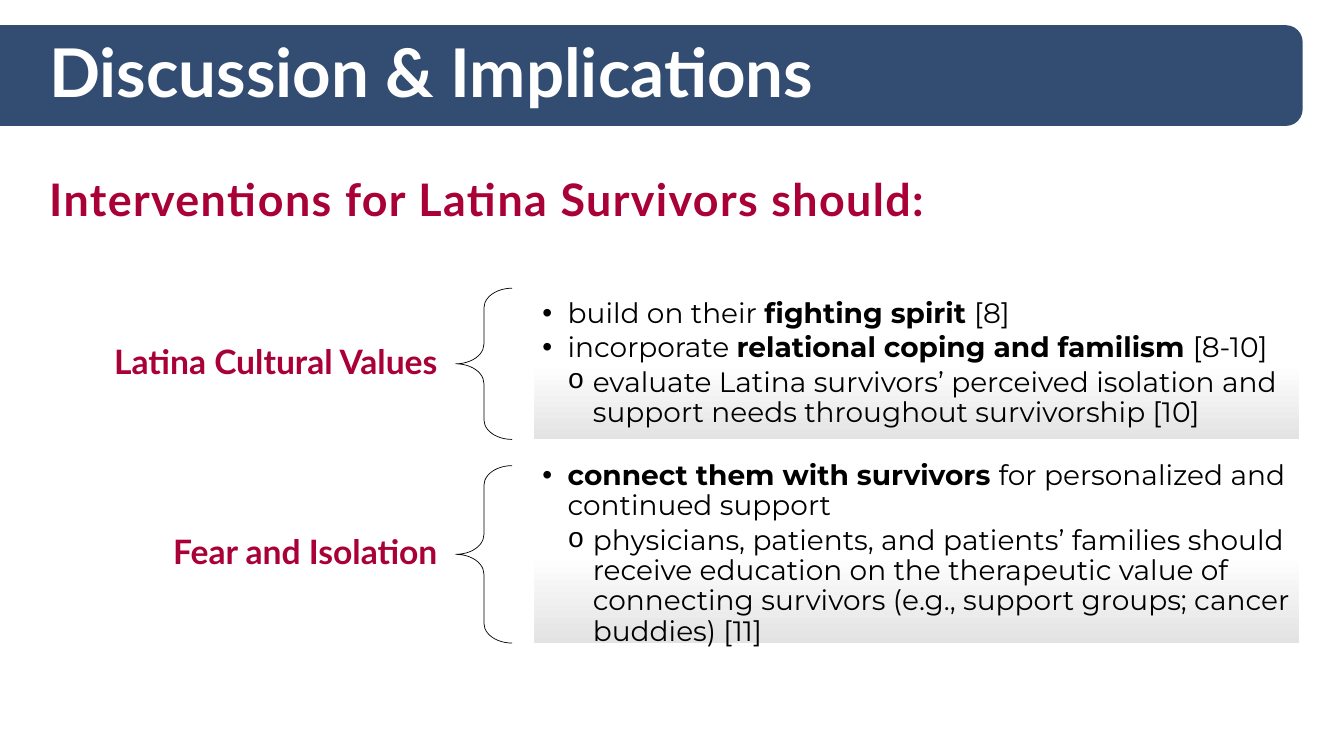
"""Build the discussion and implications slide."""
import lxml.etree
import pptx
import pptx.dml.color
import pptx.enum.shapes
import pptx.enum.text
import pptx.oxml.ns
import pptx.util

COLOURS = {"navy": "1C3A62", "crimson": "A90037", "white": "FFFFFF",
           "black": "000000", "grey": "E3E3E3"}
SHAPES = pptx.enum.shapes.MSO_SHAPE
ALIGN = pptx.enum.text.PP_ALIGN
ANCHOR = pptx.enum.text.MSO_ANCHOR
BULLETS = {1: ("•", "Arial"), 2: ("o", "Courier New")}


class SlideMaker:
    """Hold the style and the current slide, with lengths in px."""

    scale = 9144

    def __init__(self, deck):
        self.page = deck.slides.add_slide(deck.slide_layouts[6])

    def colour(self, name):
        return pptx.dml.color.RGBColor.from_string(COLOURS[name])

    def place(self, *lengths):
        return [pptx.util.Emu(length * self.scale) for length in lengths]

    def child(self, parent, tag, **values):
        return lxml.etree.SubElement(parent, pptx.oxml.ns.qn(tag), values)

    def shape(self, kind, *lengths):
        shape = self.page.shapes.add_shape(kind, *self.place(*lengths))
        shape.shadow.inherit = False
        shape.fill.background()
        shape.line.fill.background()
        return shape

    def band(self, *lengths):
        band = self.shape(SHAPES.ROUNDED_RECTANGLE, *lengths)
        band.fill.solid()
        band.fill.fore_color.rgb = self.colour("navy")
        tint = band.fill._xPr.find(".//" + pptx.oxml.ns.qn("a:srgbClr"))
        self.child(tint, "a:alpha", val="90000")

    def brace(self, *lengths):
        brace = self.shape(SHAPES.LEFT_BRACE, *lengths)
        brace.adjustments[0] = 0.35
        brace.line.color.rgb = self.colour("black")
        brace.line.width = pptx.util.Pt(0.5)

    def frame(self, box, side, edge, anchor):
        side, edge = self.place(side, edge)
        values = {"word_wrap": True, "vertical_anchor": anchor,
                  "margin_left": side, "margin_right": side,
                  "margin_top": edge, "margin_bottom": edge}
        for name, value in values.items():
            setattr(box.text_frame, name, value)
        return box.text_frame

    def span(self, para, text, size, face, colour, bold):
        span = para.add_run()
        span.text = text
        values = {"size": pptx.util.Pt(size), "name": face, "bold": bold}
        for name, value in values.items():
            setattr(span.font, name, value)
        span.font.color.rgb = self.colour(colour)
        return span

    def heading(self, text, lengths, size, colour, side=10, edge=5,
                anchor=ANCHOR.MIDDLE, align=ALIGN.LEFT, spacing=0):
        box = self.page.shapes.add_textbox(*self.place(*lengths))
        para = self.frame(box, side, edge, anchor).paragraphs[0]
        para.alignment = align
        para.line_spacing = 0.9
        span = self.span(para, text, size, "Lato", colour, True)
        if spacing:
            span.font._element.set("spc", str(spacing * 100))

    def panel(self, points, *lengths):
        panel = self.shape(SHAPES.RECTANGLE, *lengths)
        panel.fill.gradient()
        panel.fill.gradient_angle = 270
        stops = ((0.5, "white"), (1, "grey"))
        for stop, (position, colour) in zip(panel.fill.gradient_stops, stops):
            stop.position = position
            stop.color.rgb = self.colour(colour)
        frame = self.frame(panel, 8, 8, ANCHOR.MIDDLE)
        for index, (level, spans) in enumerate(points):
            para = frame.add_paragraph() if index else frame.paragraphs[0]
            self.point(para, level, spans)

    def point(self, para, level, spans):
        values = {"level": level - 1, "alignment": ALIGN.LEFT,
                  "line_spacing": 0.9, "space_after": pptx.util.Pt(3)}
        for name, value in values.items():
            setattr(para, name, value)
        properties = para._p.get_or_add_pPr()
        indent = 25 * self.scale
        properties.set("marL", str(level * indent))
        properties.set("indent", str(-indent))
        mark, face = BULLETS[level]
        self.child(properties, "a:buFont", typeface=face)
        self.child(properties, "a:buChar", char=mark)
        for text, bold in spans:
            self.span(para, text, 20, "Montserrat", "black", bold)


TOPICS = [
    ("Latina Cultural Values", 150, [
        (1, [("build on their ", False), ("fighting spirit ", True),
             ("[8]", False)]),
        (1, [("incorporate ", False),
             ("relational coping and familism ", True), ("[8-10]", False)]),
        (2, [("evaluate Latina survivors’ perceived isolation and support "
              "needs throughout survivorship [10]", False)]),
    ]),
    ("Fear and Isolation", 176, [
        (1, [("connect them with survivors ", True),
             ("for personalized and continued support", False)]),
        (2, [("physicians, patients, and patients’ families should receive "
              "education on the therapeutic value of connecting survivors "
              "(e.g., support groups; cancer buddies) [11]", False)]),
    ]),
]


def main():
    """Draw the slide and save it."""
    deck = pptx.Presentation()
    deck.slide_width = pptx.util.Inches(13.33)
    deck.slide_height = pptx.util.Inches(7.5)
    maker = SlideMaker(deck)
    maker.band(-27, 25, 1319, 100)
    maker.heading("Discussion & Implications", (39, 40, 903, 71), 48, "white")
    maker.heading("Interventions for Latina Survivors should:",
                  (39, 171, 960, 56), 32, "crimson",
                  anchor=ANCHOR.TOP, spacing=1)
    top, gap, label_height = 286, 26, 141
    for label, height, points in TOPICS:
        label_top = top + (height - label_height) // 2
        maker.heading(label, (46, label_top, 407, label_height), 24,
                      "crimson", side=19, edge=7, align=ALIGN.RIGHT)
        maker.brace(452, top, 56, height)
        maker.panel(points, 530, top, 758, height)
        top += height + gap
    deck.save("out.pptx")


if __name__ == "__main__":
    main()
